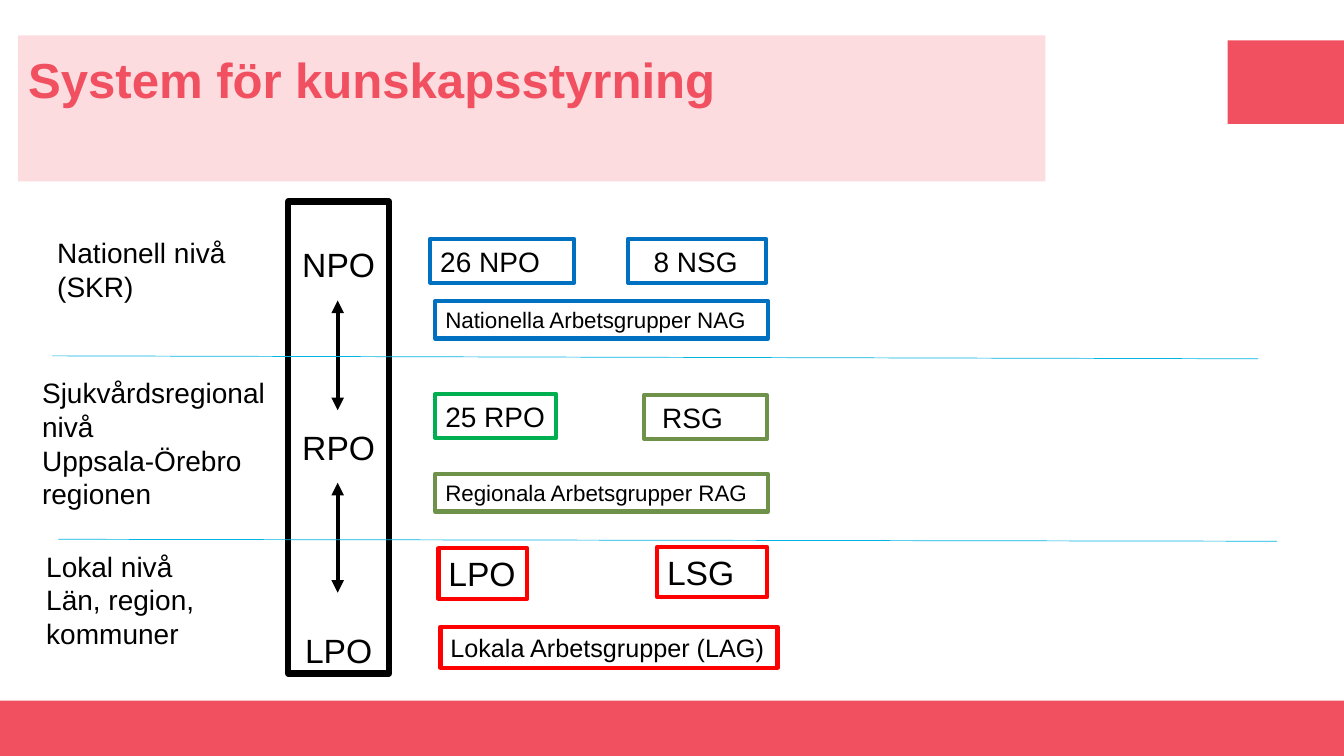
from lxml import etree
from pptx import Presentation
from pptx.dml.color import RGBColor
from pptx.enum import shapes, text
from pptx.oxml.ns import qn
from pptx.util import Pt

HUES = {"coral": "F15060", "pale": "FCDCDF", "black": "000000", "cyan": "00B4E4",
        "blue": "0070C0", "green": "00B050", "olive": "6F924B", "red": "FF0000"}
BANDS = [(0, 500.4, 960, 39.6), (876.9, 28.8, 83.1, 59.7)]
TITLE = "System för kunskapsstyrning"
STEPS = [("NPO", 0), ("RPO", 102.4), ("LPO", 116)]
ARROWS = [(214.6, 293), (344.9, 423.4)]
RULES = [(37.4, 254.2, 898.6, 256.3), (41.8, 385.2, 912.2, 386.6)]
LEVELS = [
    (33.8, 164.9, 150, ["Nationell nivå", "(SKR)"]),
    (23, 265, 182.2, ["Sjukvårdsregional nivå", "Uppsala-Örebro", "regionen"]),
    (25.9, 388.8, 152.6, ["Lokal nivå", "Län, region,", "kommuner"]),
]
GROUPS = [
    ("26 NPO", 20, "blue", 307.4, 170.6, 102.6, 0),
    ("8 NSG", 20, "blue", 448.6, 170.6, 98.6, 11.1),
    ("25 RPO", 20, "green", 311, 281.5, 86.4, 0),
    ("Lokala Arbetsgrupper (LAG)", 18, "red", 314.6, 447.8, 240.8, 0),
    ("Nationella Arbetsgrupper NAG", 16, "blue", 311, 215.1, 237.6, 0),
    ("Regionala Arbetsgrupper RAG", 16, "olive", 311, 338.6, 237.6, 0),
    ("LPO", 24, "red", 313.2, 391.7, 63.4, 0),
    ("LSG", 24, "red", 469.4, 390.6, 78.5, 0),
    ("RSG", 20, "olive", 460.1, 282.2, 87.8, 5.6),
]

deck = Presentation()
deck.slide_width, deck.slide_height = Pt(960), Pt(540)
slide = deck.slides.add_slide(deck.slide_layouts[6])


def hue(name):
    return RGBColor.from_string(HUES[name])


def rect(x, y, w, h, fill=None, line=None, width=3):
    box = slide.shapes.add_shape(shapes.MSO_SHAPE.RECTANGLE, Pt(x), Pt(y), Pt(w), Pt(h))
    box.shadow.inherit = False
    if fill:
        box.fill.solid()
        box.fill.fore_color.rgb = hue(fill)
    else:
        box.fill.background()
    if line:
        box.line.color.rgb = hue(line)
        box.line.width = Pt(width)
    else:
        box.line.fill.background()
    return box


def write(box, lines, size, color="black", bold=False, left=7.2, top=3.6,
          anchor=text.MSO_ANCHOR.TOP, align=text.PP_ALIGN.LEFT):
    frame = box.text_frame
    frame.text = "\n".join(lines)
    frame.word_wrap = True
    frame.vertical_anchor = anchor
    frame.margin_left, frame.margin_top = Pt(left), Pt(top)
    frame.margin_right = 0
    for para in frame.paragraphs:
        para.alignment = align
        for run in para.runs:
            font = run.font
            font.name, font.size, font.bold = "Arial", Pt(size), bold
            font.color.rgb = hue(color)
    return frame


def link(x1, y1, x2, y2, color, width, heads=False):
    line = slide.shapes.add_connector(
        shapes.MSO_CONNECTOR.STRAIGHT, Pt(x1), Pt(y1), Pt(x2), Pt(y2))
    line.line.color.rgb = hue(color)
    line.line.width = Pt(width)
    if heads:
        for end in ("a:headEnd", "a:tailEnd"):
            etree.SubElement(line.line._get_or_add_ln(), qn(end), type="triangle")
    etree.SubElement(line._element.spPr, qn("a:effectLst"))


for band in BANDS:
    rect(*band, fill="coral")

pillar = rect(205.9, 144, 72, 337, line="black", width=4.5)
frame = write(pillar, [name for name, gap in STEPS], 24, left=0, top=30,
              align=text.PP_ALIGN.CENTER)
for para, (name, gap) in zip(frame.paragraphs, STEPS):
    if gap:
        para.space_before = Pt(gap)
for top, low in ARROWS:
    link(241.2, top, 241.2, low, "black", 3, heads=True)

head = rect(13, 25.2, 733.7, 104.4, fill="pale")
write(head, [TITLE], 35.1, "coral", True, top=15).paragraphs[0].line_spacing = 0.9

for rule in RULES:
    link(*rule, "cyan", 0.5)
for x, y, w, lines in LEVELS:
    label = slide.shapes.add_textbox(Pt(x), Pt(y), Pt(w), Pt(24 * len(lines) + 7.2))
    write(label, lines, 20)
for name, size, color, x, y, w, shift in GROUPS:
    box = rect(x, y, w, size * 1.15 + 8.4, line=color)
    write(box, [name], size, left=7.2 + shift, anchor=text.MSO_ANCHOR.MIDDLE)

deck.save("out.pptx")
